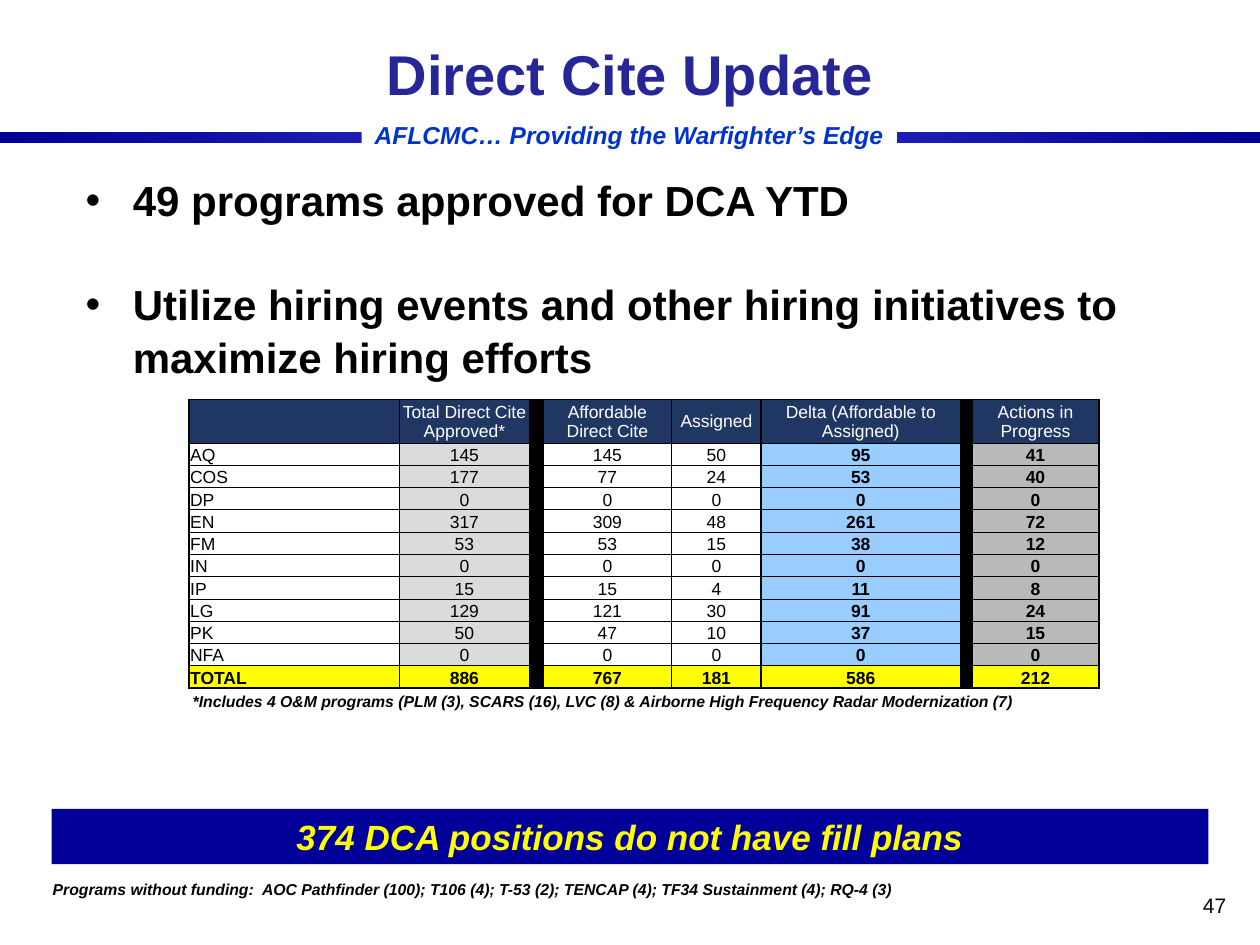
from lxml import etree
from pptx import Presentation
from pptx.dml.color import RGBColor
from pptx.enum import shapes, text
from pptx.oxml import ns
from pptx.util import Pt

NAVY, BLACK, WHITE, YELLOW = "000099", "000000", "FFFFFF", "FFFF00"
LEFT, MID, RIGHT = text.PP_ALIGN.LEFT, text.PP_ALIGN.CENTER, text.PP_ALIGN.RIGHT
TOP, CORE, BASE = (text.MSO_ANCHOR.TOP, text.MSO_ANCHOR.MIDDLE,
                   text.MSO_ANCHOR.BOTTOM)
NOTE = dict(size=9, bold=True, italic=True)

HEAD = ["", "Total Direct Cite Approved*", "", "Affordable Direct Cite",
        "Assigned", "Delta (Affordable to Assigned)", "", "Actions in Progress"]
DATA = [
    ("AQ", 145, 145, 50, 95, 41),
    ("COS", 177, 77, 24, 53, 40),
    ("DP", 0, 0, 0, 0, 0),
    ("EN", 317, 309, 48, 261, 72),
    ("FM", 53, 53, 15, 38, 12),
    ("IN", 0, 0, 0, 0, 0),
    ("IP", 15, 15, 4, 11, 8),
    ("LG", 129, 121, 30, 91, 24),
    ("PK", 50, 47, 10, 37, 15),
    ("NFA", 0, 0, 0, 0, 0),
    ("TOTAL", 886, 767, 181, 586, 212),
]
WIDTHS = [120.2, 74.4, 7.8, 73.4, 51.2, 113.8, 6.6, 72.8]
TINTS = {1: "DBDBDB", 5: "99CCFF", 7: "B9B9B9"}
BARS = (2, 6)


def rgb(code):
    return RGBColor.from_string(code)


def sub(node, tag, **attrs):
    return etree.SubElement(node, ns.qn(tag), attrs)


def style(para, color=BLACK, align=LEFT, **form):
    """Format a paragraph and its runs."""
    para.alignment = align
    for run in para.runs:
        run.font.color.rgb = rgb(color)
        for key, val in {"name": "Arial", "bold": False, **form}.items():
            setattr(run.font, key, Pt(val) if key == "size" else val)


def write(frame, words, anchor=TOP, pads=(7.2, 3.6, 7.2, 3.6), **form):
    frame.word_wrap = True
    frame.vertical_anchor = anchor
    for side, pad in zip(("left", "top", "right", "bottom"), pads):
        setattr(frame, "margin_" + side, Pt(pad))
    frame.text = words
    style(frame.paragraphs[0], **form)


def label(slide, box, words, **form):
    shape = slide.shapes.add_textbox(*map(Pt, box))
    write(shape.text_frame, words, **form)


def block(slide, box, color):
    shape = slide.shapes.add_shape(shapes.MSO_SHAPE.RECTANGLE, *map(Pt, box))
    shape.shadow.inherit = False
    shape.line.fill.background()
    shape.fill.solid()
    shape.fill.fore_color.rgb = rgb(color)
    return shape


def header(slide, box):
    """Title above a gradient rule with the motto set into it."""
    left, top, width, height = box
    rule = block(slide, (left, top + height - 6, width, 6), NAVY)
    rule.fill.gradient()
    rule.fill.gradient_angle = 45
    stops = rule.element.spPr.find(ns.qn("a:gradFill")).find(ns.qn("a:gsLst"))
    for stop in list(stops):
        stops.remove(stop)
    for pos, color in ((0, NAVY), (50, "3333CC"), (100, NAVY)):
        sub(sub(stops, "a:gs", pos=str(pos * 1000)), "a:srgbClr", val=color)

    motto = block(slide, (left + 206.6, top + 68.4, 306, 17.3), WHITE)
    write(motto.text_frame, "AFLCMC… Providing the Warfighter’s Edge",
          anchor=CORE, pads=(7.2, 0, 7.2, 0), align=MID, size=14,
          bold=True, italic=True, color="0033CC")

    title = slide.shapes.title
    spots = (left + 74.9, top + 8.6, 570.2, 66.2)
    for key, val in zip(("left", "top", "width", "height"), spots):
        setattr(title, key, Pt(val))
    write(title.text_frame, "Direct Cite Update", anchor=CORE, align=MID,
          size=32, bold=True, color="262699")


def points(slide, box, items):
    """Bulleted list with one line of space between items."""
    frame = slide.shapes.add_textbox(*map(Pt, box)).text_frame
    frame.word_wrap = True
    for num, item in enumerate(items):
        para = frame.add_paragraph() if num else frame.paragraphs[0]
        para.line_spacing = 1.05
        para.space_before = Pt(29 if num else 0)
        props = para._p.get_or_add_pPr()
        props.set("marL", str(Pt(27)))
        props.set("indent", str(Pt(-27)))
        sub(props, "a:buFont", typeface="Arial")
        sub(props, "a:buChar", char="•")
        para.add_run().text = item
        style(para, size=24, bold=True)


def border(cell, top, low):
    props = cell._tc.get_or_add_tcPr()
    for side, size in (("L", 1), ("R", 1), ("T", top), ("B", low)):
        line = sub(props, "a:ln" + side, w=str(Pt(size)))
        sub(sub(line, "a:solidFill"), "a:srgbClr", val=BLACK)


def grid(slide, box):
    """Direct cite table with two black divider columns."""
    rows = [HEAD]
    for name, total, have, used, delta, acts in DATA:
        rows.append([name, total, "", have, used, delta, "", acts])
    last = len(rows) - 1
    table = slide.shapes.add_table(len(rows), len(HEAD), *map(Pt, box)).table
    table.first_row = table.horz_banding = False
    for col, width in zip(table.columns, WIDTHS):
        col.width = Pt(width)
    for num, row in enumerate(table.rows):
        row.height = Pt(11 if num else 21)

    for r, row in enumerate(rows):
        for c, val in enumerate(row):
            cell = table.cell(r, c)
            border(cell, 0.5 if r else 1, 1 if r == last else 0.5)
            if c in BARS:
                fill = BLACK
            elif r == 0:
                fill = "203764"
            else:
                fill = YELLOW if r == last else TINTS.get(c, WHITE)
            cell.fill.solid()
            cell.fill.fore_color.rgb = rgb(fill)
            for side, pad in (("left", 0.7), ("top", 0.7),
                              ("right", 0.7), ("bottom", 0)):
                setattr(cell, "margin_" + side, Pt(pad))
            cell.vertical_anchor = BASE if r else CORE
            para = cell.text_frame.paragraphs[0]
            if val == "":
                sub(para._p, "a:endParaRPr", sz="1000")
                continue
            para.add_run().text = str(val)
            style(para, color=BLACK if r else WHITE, size=10,
                  align=LEFT if c == 0 else MID,
                  bold=r == last or (r > 0 and c in (5, 7)))
    for c in BARS:
        table.cell(0, c).merge(table.cell(last, c))


def footer(slide, box):
    """Banner, funding note and page number."""
    left, top, width, height = box
    banner = block(slide, (left, top, width, 31.7), NAVY)
    write(banner.text_frame, "374 DCA positions do not have fill plans",
          anchor=CORE, align=MID, size=20, bold=True, italic=True, color=YELLOW)
    label(slide, (left - 6.5, top + 36.7, 605.5, 18),
          "Programs without funding:  AOC Pathfinder (100); T106 (4); T-53 (2); "
          "TENCAP (4); TF34 Sustainment (4); RQ-4 (3)", **NOTE)
    label(slide, (left + width - 132.5, top + height - 36, 149.8, 36), "47",
          anchor=BASE, align=RIGHT, size=12)


def main():
    deck = Presentation()
    deck.slide_width, deck.slide_height = Pt(720), Pt(540)
    slide = deck.slides.add_slide(deck.slide_layouts[5])
    header(slide, (0, 0, 720, 81.6))
    points(slide, (41.8, 95, 636.5, 123.8), [
        "49 programs approved for DCA YTD",
        "Utilize hiring events and other hiring initiatives to "
        "maximize hiring efforts"])
    grid(slide, (108, 228.4, 520.2, 142))
    label(slide, (103, 391.7, 605.5, 18),
          "*Includes 4 O&M programs (PLM (3), SCARS (16), LVC (8) & "
          "Airborne High Frequency Radar Modernization (7)", **NOTE)
    footer(slide, (29.5, 462.2, 661, 65.6))
    deck.save("out.pptx")


if __name__ == "__main__":
    main()
